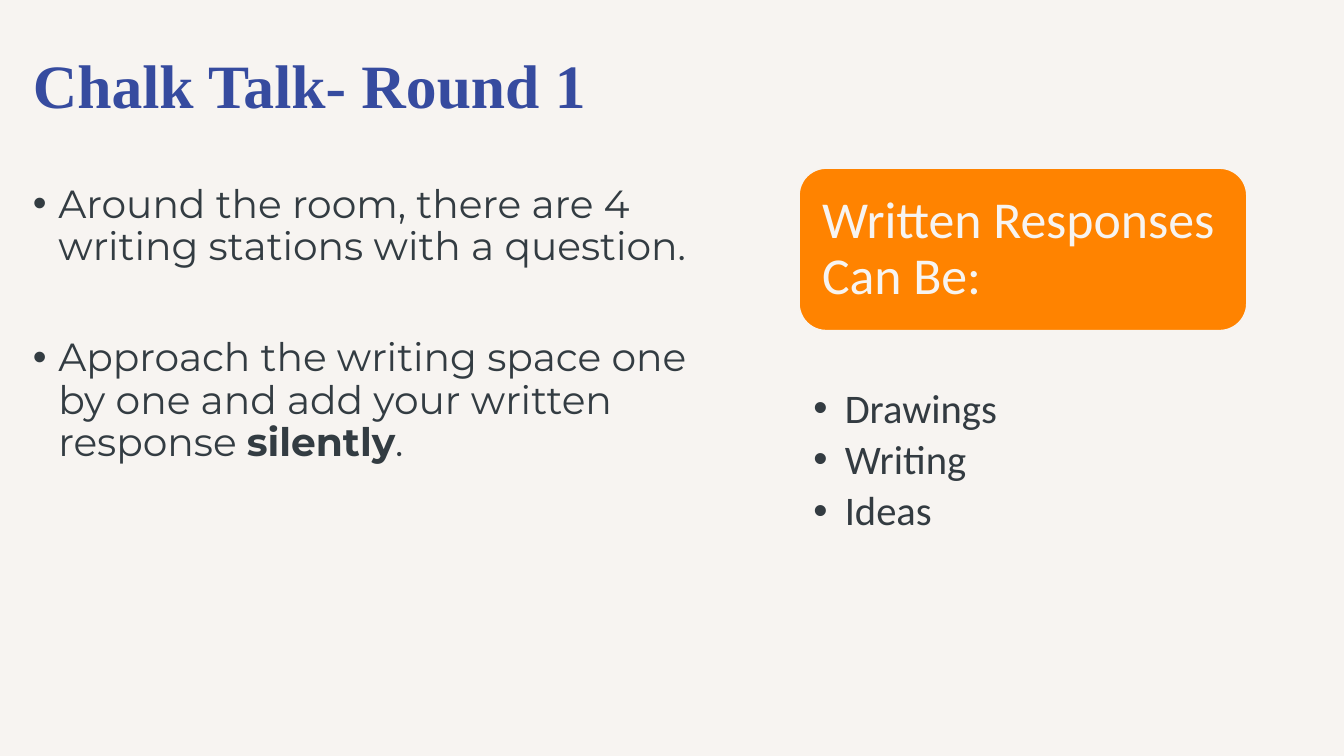
from dataclasses import dataclass
from lxml.etree import SubElement as Sub
from pptx import Presentation
from pptx.dml.color import RGBColor as Rgb
from pptx.enum.shapes import MSO_SHAPE as Kind
from pptx.enum.text import MSO_ANCHOR as Anchor, MSO_AUTO_SIZE as Fit, PP_ALIGN as Align
from pptx.oxml.ns import qn
from pptx.util import Cm, Pt


@dataclass(frozen=True)
class Theme:
    paper: str = "F7F4F1"
    blue: str = "364B9F"
    ink: str = "333C42"
    slate: str = "333B41"
    orange: str = "FF8300"
    title: tuple = ("Times New Roman", 44)
    body: tuple = ("Montserrat", 28)
    card: tuple = ("Calibri", 37)
    item: tuple = ("Calibri", 29)


def apply(target, form):
    for name, value in form.items():
        setattr(target, name, value)


class Page:
    def __init__(self, deck, theme):
        self.theme = theme
        self.slide = deck.slides.add_slide(deck.slide_layouts[1])
        self.paint(self.slide.background.fill, theme.paper)

    def paint(self, fill, color):
        fill.solid()
        fill.fore_color.rgb = Rgb.from_string(color)

    def place(self, shape, box):
        sides = ("left", "top", "width", "height")
        apply(shape, dict(zip(sides, map(Cm, box))))

    def letter(self, shape, paras, face, color, pads=(0.25, 0.13, 0.25, 0.13),
               anchor=Anchor.TOP, gap=0, after=0, indent=0):
        frame = shape.text_frame
        sides = ("margin_left", "margin_top", "margin_right", "margin_bottom")
        apply(frame, dict(zip(sides, map(Cm, pads))))
        apply(frame, {"word_wrap": True, "auto_size": Fit.NONE, "vertical_anchor": anchor})
        name, size = face
        for i, runs in enumerate(paras):
            para = frame.add_paragraph() if i else frame.paragraphs[0]
            if indent:
                self.bullet(para, indent)
            apply(para, {"alignment": Align.LEFT, "line_spacing": 0.9,
                         "space_before": Pt(gap if i else 0), "space_after": Pt(after)})
            for text, bold in runs:
                run = para.add_run()
                run.text = text
                apply(run.font, {"name": name, "size": Pt(size), "bold": bold})
                run.font.color.rgb = Rgb.from_string(color)

    def bullet(self, para, indent):
        props = para._p.get_or_add_pPr()
        props.set("marL", str(Cm(indent)))
        props.set("indent", str(-Cm(indent)))
        Sub(props, qn("a:buFont")).set("typeface", "Arial")
        Sub(props, qn("a:buChar")).set("char", "•")

    def title(self, box, text):
        shape = self.slide.shapes.title
        self.place(shape, box)
        self.letter(shape, [[(text, True)]], self.theme.title, self.theme.blue,
                    anchor=Anchor.MIDDLE)

    def body(self, box, paras):
        shape = self.slide.placeholders[1]
        self.place(shape, box)
        self.letter(shape, paras, self.theme.body, self.theme.ink, gap=49, indent=0.64)

    def card(self, box, text):
        shape = self.slide.shapes.add_shape(Kind.ROUNDED_RECTANGLE, *map(Cm, box))
        shape.shadow.inherit = False
        self.paint(shape.fill, self.theme.orange)
        self.paint(shape.line.fill, self.theme.paper)
        shape.line.width = Pt(1)
        self.letter(shape, [[(text, False)]], self.theme.card, self.theme.paper,
                    pads=(0.38,) * 4, anchor=Anchor.MIDDLE)

    def items(self, box, words):
        shape = self.slide.shapes.add_textbox(*map(Cm, box))
        self.letter(shape, [[(word, False)] for word in words], self.theme.item,
                    self.theme.slate, pads=(0.36, 0.13, 0.74, 0.13), after=5.3, indent=0.79)


def main():
    deck = Presentation()
    apply(deck, {"slide_width": Cm(33.87), "slide_height": Cm(19.05)})
    page = Page(deck, Theme())
    page.title((0.58, 0.38, 32.69, 3.68), "Chalk Talk- Round 1")
    page.body((0.58, 4.52, 17.91, 12.42), [
        [("Around the room, there are 4 writing stations with a question.", False)],
        [("Approach the writing space one by one and add your written response ", False),
         ("silently", True), (".", False)],
    ])
    page.card((20.14, 4.24, 11.28, 4.09), "Written Responses Can Be:")
    page.items((20.14, 9.65, 11.28, 4.2), ["Drawings", "Writing", "Ideas"])
    deck.save("out.pptx")


if __name__ == "__main__":
    main()
